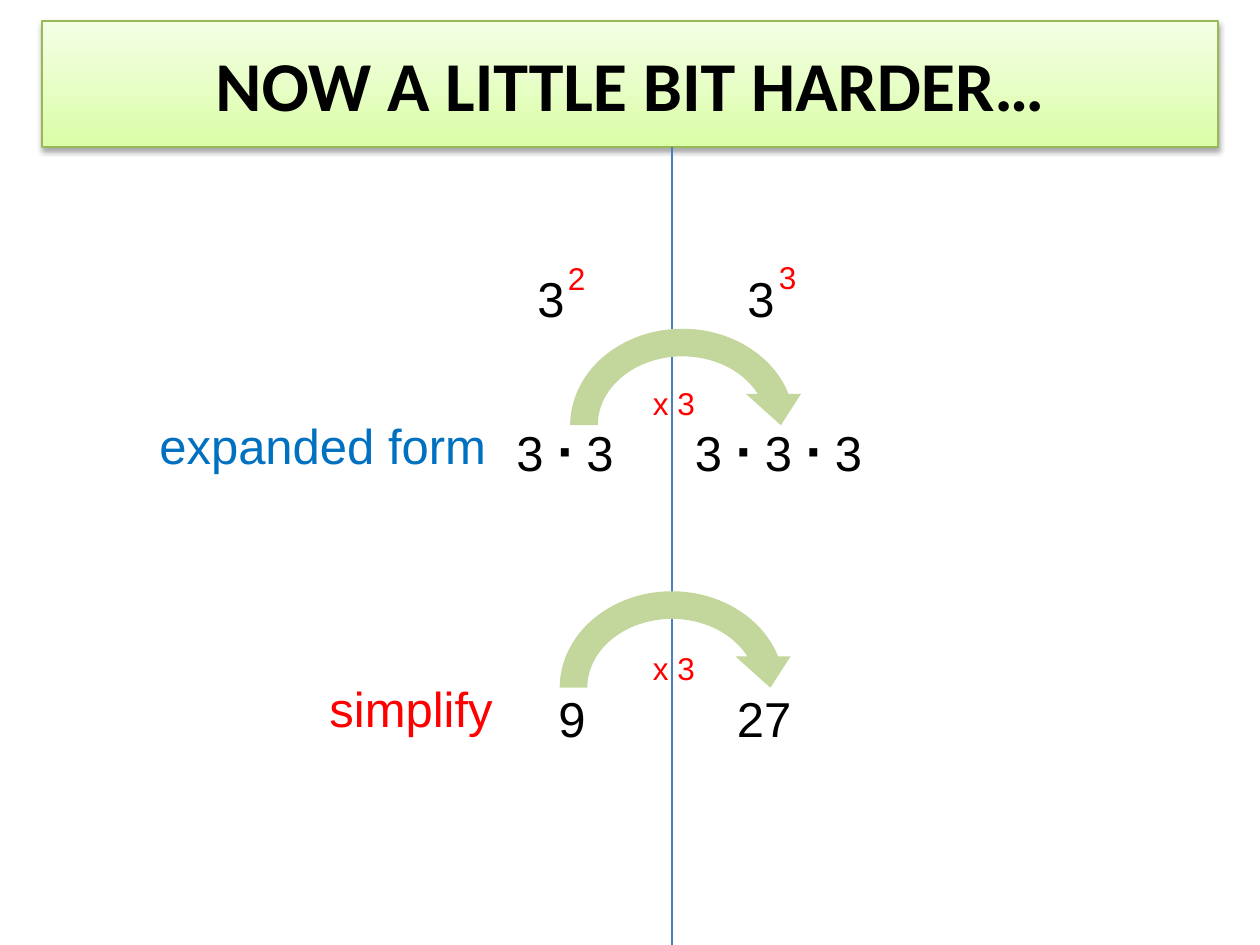
from pptx import Presentation
from pptx.dml.color import RGBColor as RGB
from pptx.enum.shapes import MSO_CONNECTOR as LINE, MSO_SHAPE as SHAPE
from pptx.enum.text import MSO_ANCHOR as ANCHOR, PP_ALIGN as ALIGN
from pptx.oxml.ns import qn
from pptx.util import Inches, Pt
from lxml.etree import SubElement

COLORS = {
    "black": "000000", "red": "FF0000", "blue": "0070C0", "line": "4B7EBC",
    "arrow": "C3D69B", "edge": "98B954", "pale": "F5FFE6", "lime": "DAFDA7",
}

# Content: text, left, top, width (grid of 120 columns by 90 rows), color
TITLE = "NOW A LITTLE BIT HARDER…"
LARGE = [
    ("3", 50, 25, 5, "black"),
    ("3", 70, 25, 5, "black"),
    ("expanded form", 14, 39, 34.4, "blue"),
    ("3 ∙ 3", 48, 39, 11.8, "black"),
    ("3 ∙ 3 ∙ 3", 65, 39, 18.5, "black"),
    ("simplify", 30.2, 64, 18.1, "red"),
    ("9", 52, 65, 5, "black"),
    ("27", 69, 65, 7.7, "black"),
]
SMALL = [
    ("2", 52.9, 24.1, 4.1, "red"),
    ("3", 73, 24, 4.1, "red"),
    ("x 3", 61, 36, 6.5, "red"),
    ("x 3", 61, 61.2, 6.5, "red"),
]
ARROWS = [(53, 30), (52, 55)]
MID = 64

deck = Presentation()
deck.slide_width, deck.slide_height = Inches(10), Inches(7.5)
slide = deck.slides.add_slide(deck.slide_layouts[6])
shapes = slide.shapes


def grid(*cells):
    return [Inches(cell / 12) for cell in cells]


def color(name):
    return RGB.from_string(COLORS[name])


def write(frame, text, size=28, font="Arial", ink="black", bold=False,
          align=ALIGN.LEFT, anchor=ANCHOR.TOP, wrap=False):
    frame.word_wrap = wrap
    frame.vertical_anchor = anchor
    para = frame.paragraphs[0]
    para.alignment = align
    # Dots are larger and bold
    for part in text.replace("∙", "|∙|").split("|"):
        dot = part == "∙"
        run = para.add_run()
        run.text = part
        run.font.size = Pt(32 if dot else size)
        run.font.name = font
        run.font.bold = bold or dot
        run.font.color.rgb = color(ink)


# Title banner, with the theme's soft shadow
banner = shapes.add_shape(SHAPE.RECTANGLE, *grid(4, 2, 112, 12))
banner.fill.gradient()
banner.fill.gradient_angle = 270
for stop, name in zip(banner.fill.gradient_stops, ("pale", "lime")):
    stop.color.rgb = color(name)
banner.line.color.rgb = color("edge")
banner.line.width = Pt(0.75)
write(banner.text_frame, TITLE, size=40, font="Calibri", bold=True,
      align=ALIGN.CENTER, anchor=ANCHOR.MIDDLE, wrap=True)

# Divider
rule = shapes.add_connector(LINE.STRAIGHT, *grid(MID, 14, MID, 90))
rule.line.color.rgb = color("line")
rule.line.width = Pt(0.75)
SubElement(rule._element.spPr, qn("a:effectLst"))

# Curved arrows
for left, top in ARROWS:
    arrow = shapes.add_shape(SHAPE.CIRCULAR_ARROW, *grid(left, top, 24, 21))
    arrow.shadow.inherit = False
    arrow.fill.solid()
    arrow.fill.fore_color.rgb = color("arrow")
    arrow.line.fill.background()

# Expressions and labels
for items, size, high in ((LARGE, 28, 6.8), (SMALL, 18, 4.8)):
    for text, left, top, width, ink in items:
        tall = 7.7 if "∙" in text else high
        box = shapes.add_textbox(*grid(left, top, width, tall))
        write(box.text_frame, text, size=size, ink=ink)

deck.save("out.pptx")
